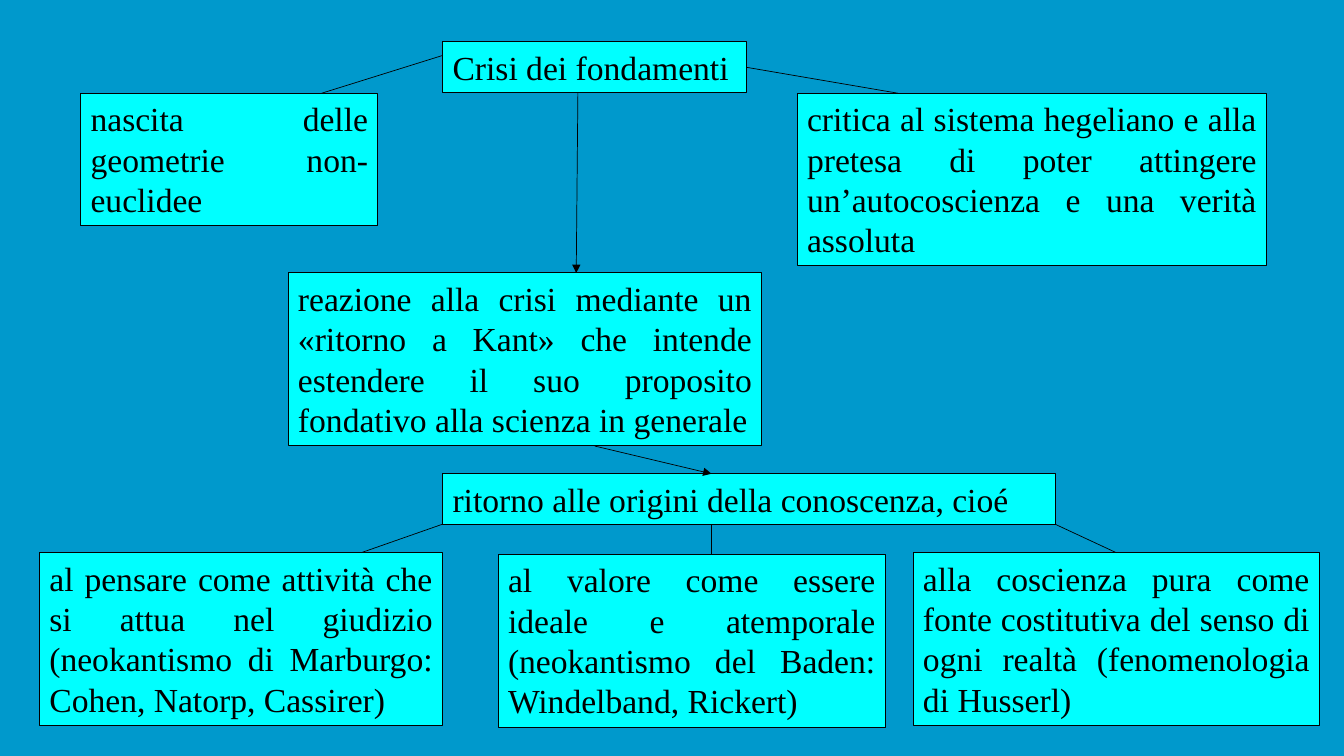
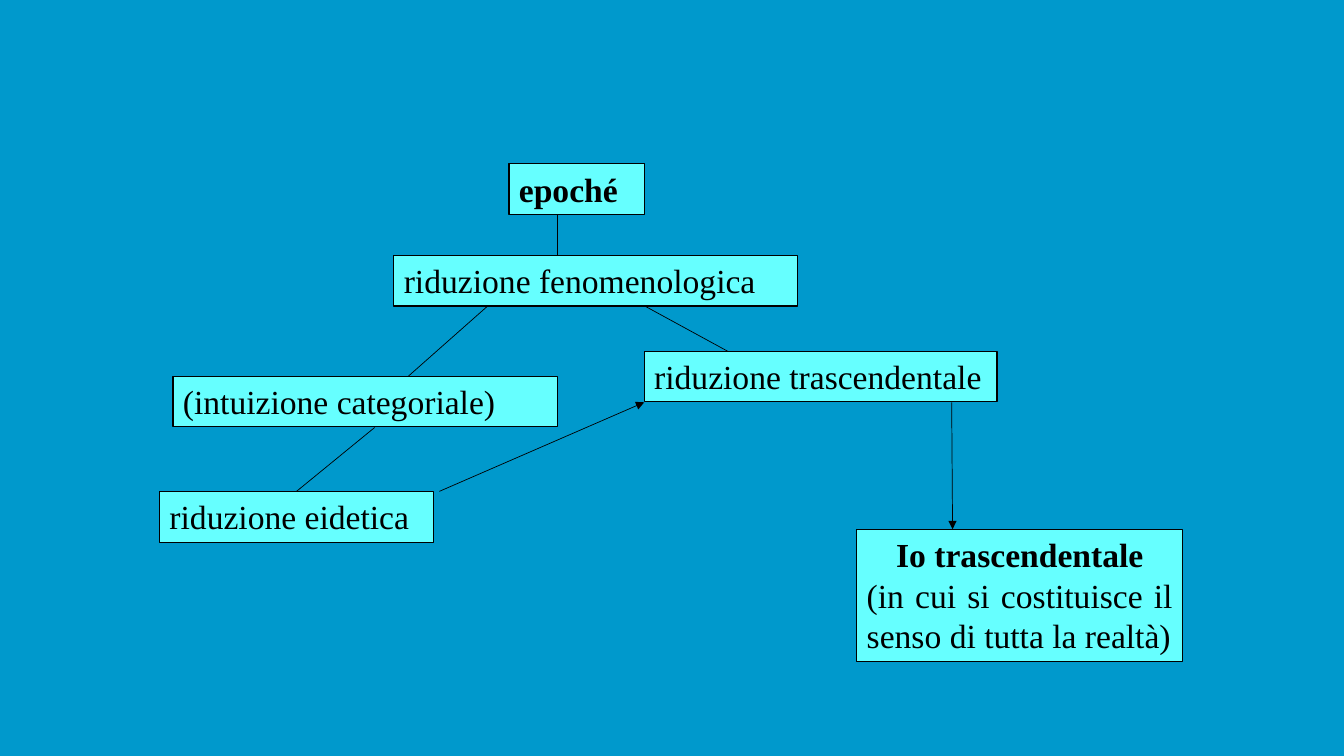
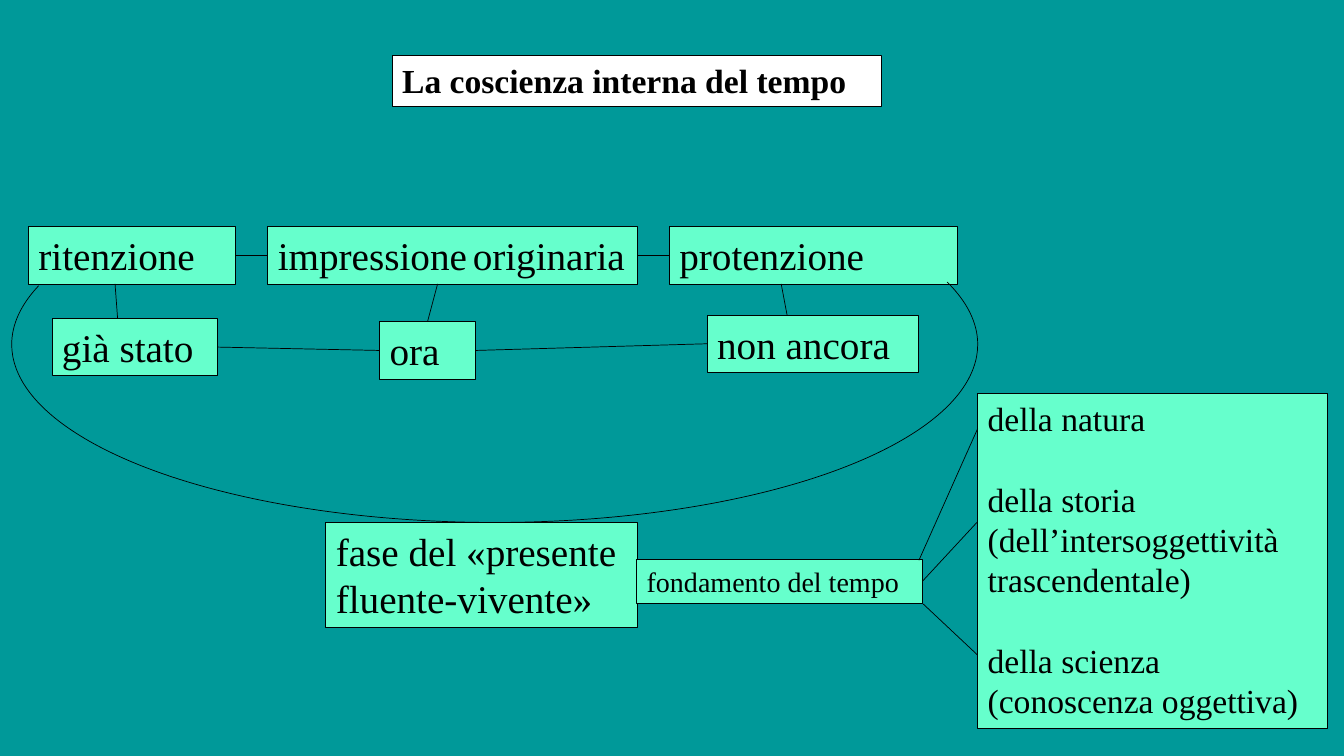
"""Three concept maps on neo-Kantianism and phenomenology."""
from itertools import pairwise

from lxml import etree
from pptx import Presentation
from pptx.dml.color import RGBColor
from pptx.enum.shapes import MSO_CONNECTOR, MSO_SHAPE
from pptx.enum.text import MSO_ANCHOR, MSO_AUTO_SIZE, PP_ALIGN
from pptx.oxml.ns import qn
from pptx.util import Emu, Pt

STRAIGHT = MSO_CONNECTOR.STRAIGHT
ARC = MSO_SHAPE.ARC
TOP_ANCHOR = MSO_ANCHOR.TOP
GROW = MSO_AUTO_SIZE.SHAPE_TO_FIT_TEXT
LEFT_ALIGN, CENTER, JUSTIFY = PP_ALIGN.LEFT, PP_ALIGN.CENTER, PP_ALIGN.JUSTIFY
TOP, LEFT, BOTTOM, RIGHT = range(4)

BLACK = RGBColor(0x00, 0x00, 0x00)
WHITE = RGBColor(0xFF, 0xFF, 0xFF)
BLUE = RGBColor(0x00, 0x99, 0xCC)
TEAL = RGBColor(0x00, 0x99, 0x99)
CYAN = RGBColor(0x00, 0xFF, 0xFF)
LIGHT_CYAN = RGBColor(0x66, 0xFF, 0xFF)
MINT = RGBColor(0x66, 0xFF, 0xCC)

FONT = "Times New Roman"
COLUMNS, ROWS = 160, 90
CELL = Pt(6)
PADDING = 1.2
LEADING = 1.21


def grid(*counts):
    """Turn counts of grid cells into lengths."""
    return [Emu(round(count * CELL)) for count in counts]


class ConceptMap:
    """Holds the presentation, the current slide and its box colour."""

    def __init__(self):
        """Start an empty widescreen presentation."""
        self.presentation = Presentation()
        size = grid(COLUMNS, ROWS)
        self.presentation.slide_width, self.presentation.slide_height = size
        self.slide = None
        self.fill = None

    def new_slide(self, background, fill):
        """Add a blank slide with its background and box colour."""
        self.slide = self.presentation.slides.add_slide(self.presentation.slide_layouts[6])
        self.slide.background.fill.solid()
        self.slide.background.fill.fore_color.rgb = background
        self.fill = fill

    def box(self, left, top, width, *texts, lines=1, size=24, bold=False,
            align=LEFT_ALIGN, gap=0, fill=None):
        """Add an outlined box as high as its lines of text."""
        height = PADDING + lines * LEADING * Pt(size) / CELL
        shape = self.slide.shapes.add_textbox(*grid(left, top, width, height))
        shape.fill.solid()
        shape.fill.fore_color.rgb = fill or self.fill
        self.outline(shape, 0.75)
        frame = shape.text_frame
        frame.word_wrap = True
        frame.auto_size = GROW
        frame.vertical_anchor = TOP_ANCHOR
        frame.text = "\n".join(texts)
        for index, paragraph in enumerate(frame.paragraphs):
            paragraph.alignment = align
            paragraph.space_before = Pt(gap if index else 0)
            paragraph.font.name = FONT
            paragraph.font.size = Pt(size)
            paragraph.font.bold = bold
            paragraph.font.color.rgb = BLACK
        return shape

    def heading(self, shape):
        """Centre the first paragraph of a box and make it bold."""
        paragraph = shape.text_frame.paragraphs[0]
        paragraph.alignment = CENTER
        paragraph.font.bold = True

    def add_word(self, shape, word):
        """Append a word to a box after a narrow space."""
        paragraph = shape.text_frame.paragraphs[0]
        space = paragraph.add_run()
        space.text = " "
        space.font.name = "Calibri"
        space.font.size = Pt(18)
        paragraph.add_run().text = word

    def outline(self, shape, width):
        """Draw a shape or connector with a black line."""
        shape.line.color.rgb = BLACK
        shape.line.width = Pt(width)

    def connect(self, start, end, arrow=False):
        """Join two ends, each a grid point or a box with its side."""
        start_joined, end_joined = (not isinstance(place[0], (int, float)) for place in (start, end))
        begin_point = (0, 0) if start_joined else start
        end_point = (0, 0) if end_joined else end
        connector = self.slide.shapes.add_connector(STRAIGHT, *grid(*begin_point, *end_point))
        if start_joined:
            connector.begin_connect(*start)
        if end_joined:
            connector.end_connect(*end)
        self.outline(connector, 0.5)
        if arrow:
            etree.SubElement(connector.line._get_or_add_ln(), qn("a:tailEnd"), type="triangle")
        etree.SubElement(connector._element.spPr, qn("a:effectLst"))

    def chain(self, *boxes):
        """Join neighbouring boxes from right side to left side."""
        for first, second in pairwise(boxes):
            self.connect((first, RIGHT), (second, LEFT))

    def arc(self, left, top, width, height, *angles):
        """Add an unfilled arc between two angles."""
        shape = self.slide.shapes.add_shape(ARC, *grid(left, top, width, height))
        shape.shadow.inherit = False
        shape.fill.background()
        self.outline(shape, 0.5)
        for index, angle in enumerate(angles):
            shape.adjustments[index] = angle * 0.6


def draw_crisis(chart):
    """Draw the crisis of foundations and the return to Kant."""
    chart.new_slide(BLUE, CYAN)
    crisis = chart.box(52.7, 5, 36.2, "Crisi dei fondamenti")
    chart.box(9.6, 11.1, 35.4, "nascita delle geometrie non-euclidee", lines=3, align=JUSTIFY)
    chart.box(94.9, 11.1, 55.9, "critica al sistema hegeliano e alla pretesa di poter attingere "
              "un’autocoscienza e una verità assoluta", lines=4, align=JUSTIFY)
    chart.box(34.3, 32.5, 56.4, "reazione alla crisi mediante un «ritorno a Kant» che intende "
              "estendere il suo proposito fondativo alla scienza in generale",
              lines=4, align=JUSTIFY)
    chart.box(52.7, 56.4, 73, "ritorno alle origini della conoscenza, cioé")
    chart.box(4.7, 65.8, 48, "al pensare come attività che si attua nel giudizio "
              "(neokantismo di Marburgo: Cohen, Natorp, Cassirer)", lines=4, align=JUSTIFY)
    chart.box(59.3, 66, 46.1, "al valore come essere ideale e atemporale "
              "(neokantismo del Baden: Windelband, Rickert)", lines=4, align=JUSTIFY)
    consciousness = chart.box(
        108.7, 65.8, 48.4, "alla coscienza pura come fonte costitutiva del senso di ogni realtà "
        "(fenomenologia di Husserl)", lines=4, align=JUSTIFY)
    chart.connect((52.7, 6.6), (38.3, 11.1))
    chart.connect((crisis, RIGHT), (106.9, 11.1))
    chart.connect((68.8, 11.1), (68.6, 32.5), arrow=True)
    chart.connect((70.8, 53.1), (84.7, 56.4), arrow=True)
    chart.connect((52.7, 62.4), (43, 65.8))
    chart.connect((84.7, 62.4), (84.7, 66))
    chart.connect((125.6, 62.4), (consciousness, TOP))


def draw_reduction(chart):
    """Draw the steps from the epoché to the transcendental self."""
    chart.new_slide(BLUE, LIGHT_CYAN)
    chart.box(60.6, 19.5, 16.1, "epoché", bold=True)
    chart.box(46.9, 30.4, 48, "riduzione fenomenologica")
    eidetic = chart.box(19, 58.5, 32.6, "riduzione eidetica")
    chart.box(76.7, 41.8, 42, "riduzione trascendentale")
    chart.box(20.6, 44.8, 45.8, "(intuizione categoriale)")
    transcendental_self = chart.box(
        102, 63, 38.8, "Io trascendentale",
        "(in cui si costituisce il senso di tutta la realtà)", lines=3, align=JUSTIFY)
    chart.heading(transcendental_self)
    chart.connect((66.4, 25.5), (66.4, 30.4))
    chart.connect((52.3, 58.5), (76.7, 47.9), arrow=True)
    chart.connect((58.1, 36.4), (48.6, 44.8))
    chart.connect((76.7, 36.4), (86.6, 41.8))
    chart.connect((44.6, 50.9), (eidetic, TOP))
    chart.connect((113.3, 47.9), (113.4, 63), arrow=True)


def draw_time(chart):
    """Draw the inner consciousness of time."""
    chart.new_slide(TEAL, MINT)
    chart.box(46.7, 6.6, 58.3, "La coscienza interna del tempo", bold=True, fill=WHITE)
    retention = chart.box(3.4, 27, 24.7, "ritenzione", size=28)
    impression = chart.box(31.9, 27, 44, "impressione", size=28)
    chart.add_word(impression, "originaria")
    protention = chart.box(79.7, 27, 34.3, "protenzione", size=28)
    now = chart.box(45.2, 38.3, 11.4, "ora", size=28)
    past = chart.box(6.2, 37.9, 19.7, "già stato", size=28)
    future = chart.box(84.2, 37.5, 25.2, "non ancora", size=28)
    chart.arc(1.4, 19.8, 115, 42.4, 352.15, 187.33)
    chart.box(38.8, 62.2, 37.1, "fase del «presente fluente-vivente»", lines=2, size=28)
    foundation = chart.box(75.8, 66.6, 34, "fondamento del tempo", size=20)
    chart.box(116.4, 46.8, 41.6, "della natura",
              "della storia (dell’intersoggettività trascendentale)",
              "della scienza (conoscenza oggettiva)", lines=8, gap=28.8)
    chart.connect((109.4, 66.7), (116.4, 51))
    chart.connect((foundation, RIGHT), (116.3, 62.2))
    chart.connect((109.9, 71.9), (116.4, 78))
    chart.chain(retention, impression, protention)
    chart.chain(past, now, future)
    chart.connect((13.7, 33.8), (14, 37.9))
    chart.connect((52.1, 33.8), (now, TOP))
    chart.connect((93, 33.8), (93.7, 37.5))


def main():
    """Build and save the presentation."""
    chart = ConceptMap()
    draw_crisis(chart)
    draw_reduction(chart)
    draw_time(chart)
    chart.presentation.save("out.pptx")


if __name__ == "__main__":
    main()
